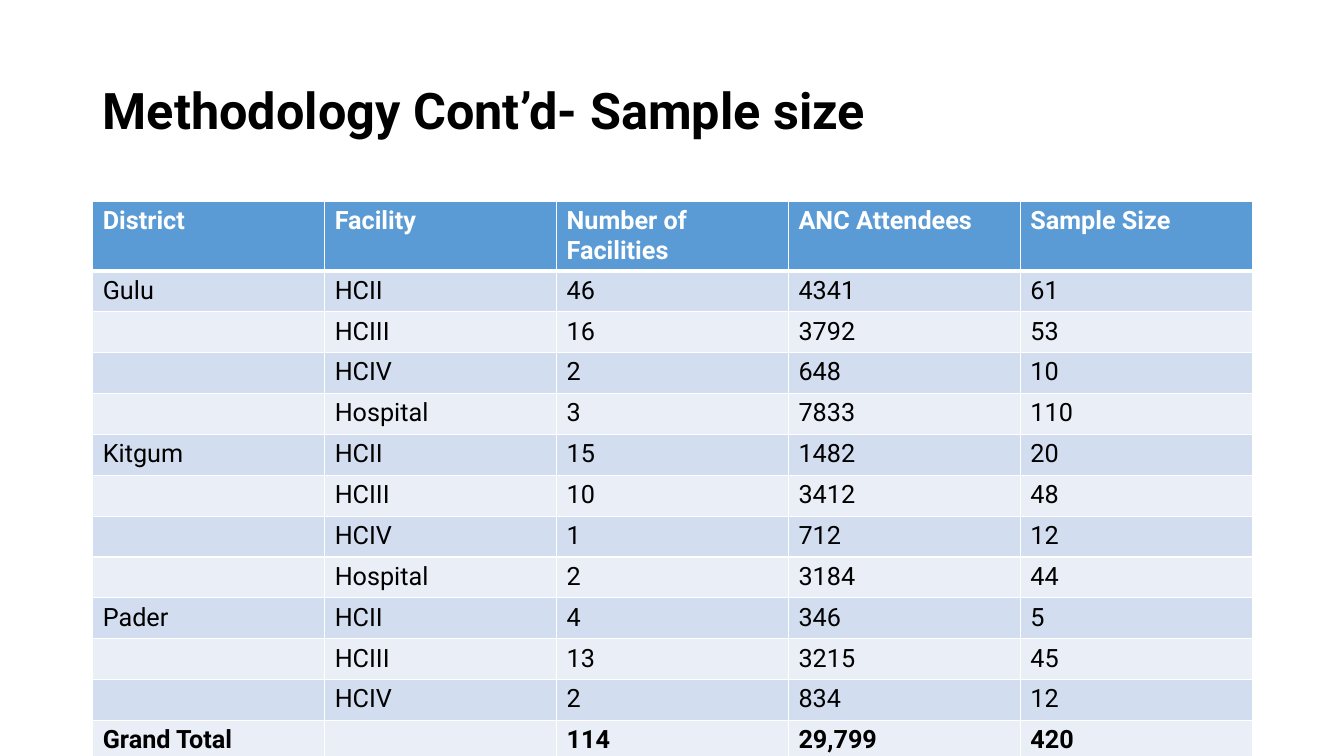
from dataclasses import dataclass

from lxml.etree import SubElement
from pptx import Presentation
from pptx.dml.color import RGBColor
from pptx.enum.text import MSO_ANCHOR
from pptx.oxml.ns import qn
from pptx.slide import Slide
from pptx.table import _Cell
from pptx.text.text import _Paragraph
from pptx.util import Inches, Pt

LEFT, WIDTH = 0.92, 11.5
WHITE, BLACK = "FFFFFF", "000000"
HEADS = ("District", "Facility", "Number of Facilities", "ANC Attendees", "Sample Size")


@dataclass
class Site:
    kind: str
    count: str
    women: str
    sample: str


@dataclass
class Look:
    fill: str
    ink: str
    bold: bool
    top: float = 1
    base: float = 1


DISTRICTS = {
    "Gulu": (
        Site("HCII", "46", "4341", "61"),
        Site("HCIII", "16", "3792", "53"),
        Site("HCIV", "2", "648", "10"),
        Site("Hospital", "3", "7833", "110"),
    ),
    "Kitgum": (
        Site("HCII", "15", "1482", "20"),
        Site("HCIII", "10", "3412", "48"),
        Site("HCIV", "1", "712", "12"),
        Site("Hospital", "2", "3184", "44"),
    ),
    "Pader": (
        Site("HCII", "4", "346", "5"),
        Site("HCIII", "13", "3215", "45"),
        Site("HCIV", "2", "834", "12"),
    ),
}
TOTAL = ("Grand Total", "", "114", "29,799", "420")


def paint(part, color: str) -> None:
    """Give a fill a solid colour."""
    part.solid()
    part.fore_color.rgb = RGBColor.from_string(color)


def style(para: _Paragraph, size: float, color: str, bold: bool) -> None:
    for run in para.runs:
        for name, value in {"name": "Roboto", "size": Pt(size), "bold": bold}.items():
            setattr(run.font, name, value)
        paint(run.font.fill, color)


def add_title(slide: Slide, text: str) -> None:
    title = slide.shapes.title
    box = {"left": LEFT, "top": 0.4, "width": WIDTH, "height": 1.45}
    for name, value in box.items():
        setattr(title, name, Inches(value))
    frame = title.text_frame
    frame.text = text
    frame.word_wrap = True
    frame.vertical_anchor = MSO_ANCHOR.MIDDLE
    para = frame.paragraphs[0]
    for name, value in {"alignment": 1, "line_spacing": 0.9}.items():
        setattr(para, name, value)
    style(para, 36, BLACK, True)


def edge(cell: _Cell, look: Look) -> None:
    """Draw white lines on the four sides of a cell."""
    props = cell._tc.get_or_add_tcPr()
    sides = {"lnL": 1, "lnR": 1, "lnT": look.top, "lnB": look.base}
    for side, points in sides.items():
        line = SubElement(props, qn(f"a:{side}"), w=str(Pt(points)))
        fill = SubElement(line, qn("a:solidFill"))
        SubElement(fill, qn("a:srgbClr"), val=WHITE)


def row_look(row: int, last: int) -> Look:
    if row == 0:
        return Look("5B9BD5", WHITE, True, base=3)
    band = "D2DEEF" if row % 2 else "EAEFF7"
    return Look(band, BLACK, row == last, top=3 if row == 1 else 1)


def add_grid(slide: Slide, rows: list[tuple[str, ...]]) -> None:
    head, body = 0.67, 4.87
    last = len(rows) - 1
    table = slide.shapes.add_table(
        len(rows), len(HEADS), Inches(LEFT), Inches(2), Inches(WIDTH), Inches(head + body)
    ).table
    for r, texts in enumerate(rows):
        table.rows[r].height = Inches(body / last if r else head)
        look = row_look(r, last)
        for c, text in enumerate(texts):
            cell = table.cell(r, c)
            edge(cell, look)
            paint(cell.fill, look.fill)
            if text:
                cell.text = text
                style(cell.text_frame.paragraphs[0], 18, look.ink, look.bold)


def main() -> None:
    deck = Presentation()
    deck.slide_width, deck.slide_height = Inches(13.33), Inches(7.5)
    slide = deck.slides.add_slide(deck.slide_layouts[5])
    add_title(slide, "Methodology Cont’d- Sample size")
    rows = [HEADS]
    for name, sites in DISTRICTS.items():
        for i, site in enumerate(sites):
            label = "" if i else name
            rows.append((label, site.kind, site.count, site.women, site.sample))
    add_grid(slide, rows + [TOTAL])
    deck.save("out.pptx")


if __name__ == "__main__":
    main()
